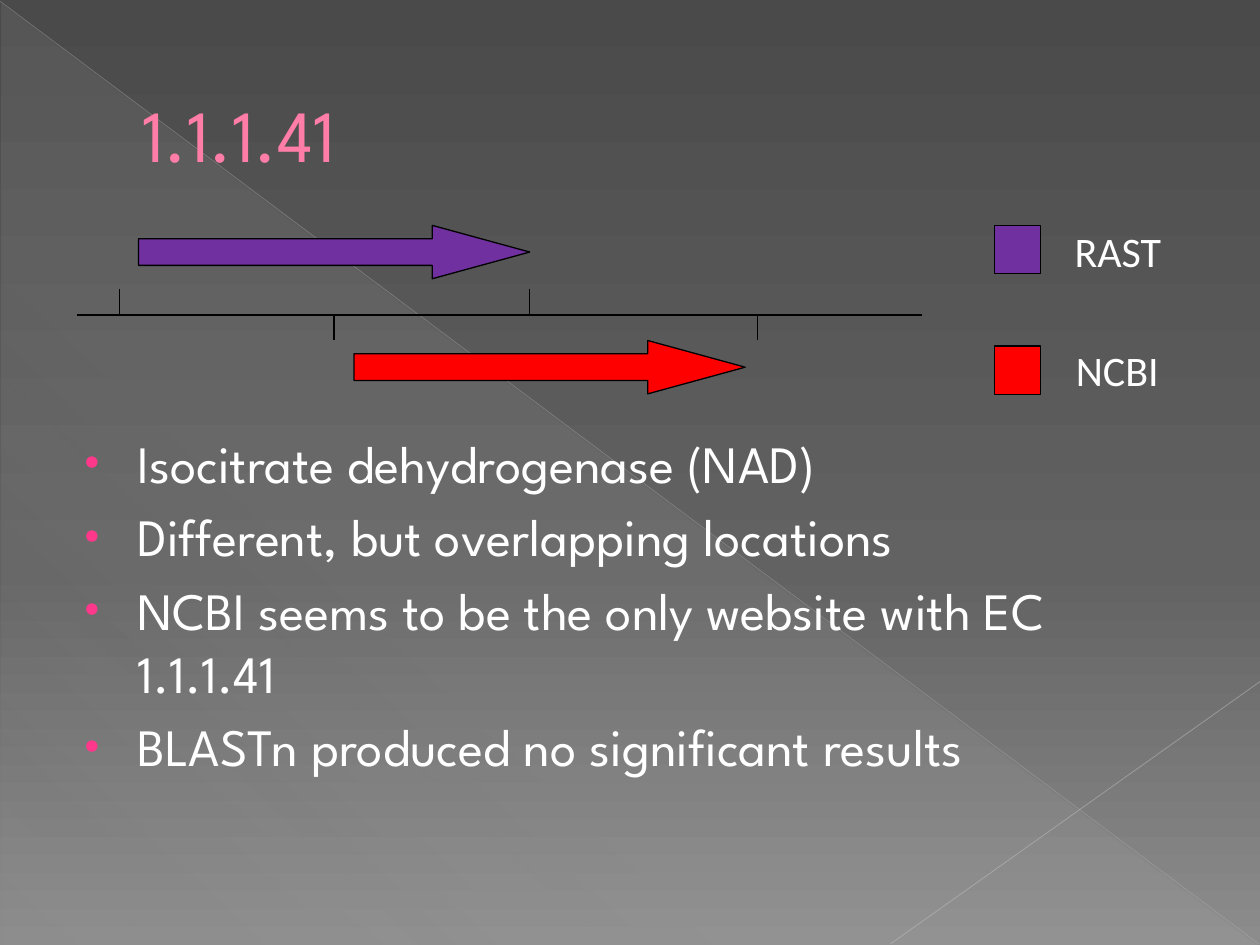
import pptx
import pptx.dml.color
import pptx.enum.shapes
import pptx.enum.text
import pptx.oxml.ns
import pptx.oxml.xmlchemy
import pptx.util
from lxml import etree

Pt = pptx.util.Pt
RGBColor = pptx.dml.color.RGBColor
qn = pptx.oxml.ns.qn
SHAPE = pptx.enum.shapes.MSO_SHAPE
ANCHOR = pptx.enum.text.MSO_ANCHOR
AUTO_SIZE = pptx.enum.text.MSO_AUTO_SIZE

BLACK = RGBColor(0x00, 0x00, 0x00)
WHITE = RGBColor(0xFF, 0xFF, 0xFF)
PURPLE = RGBColor(0x70, 0x30, 0xA0)
RED = RGBColor(0xFF, 0x00, 0x00)
TITLE_PINK = RGBColor(0xFF, 0x7D, 0xA7)
TITLE_EDGE = RGBColor(0xB1, 0x27, 0x61)
BULLET_PINK = RGBColor(0xFF, 0x38, 0x8C)
DARK_GRAY = RGBColor(0x4A, 0x4A, 0x4A)
MID_GRAY = RGBColor(0x62, 0x62, 0x62)
LIGHT_GRAY = RGBColor(0x8C, 0x8C, 0x8C)
SHEEN = RGBColor(0xD2, 0xD2, 0xD2)
DIAGONAL = RGBColor(0xBF, 0xBF, 0xBF)
CORNER = RGBColor(0xC6, 0xC6, 0xC6)

HEADING_FONT = "League Spartan"
LABEL_FONT = "Calibri"
BULLETS = [
    "Isocitrate dehydrogenase (NAD)",
    "Different, but overlapping locations",
    "NCBI seems to be the only website with EC 1.1.1.41",
    "BLASTn produced no significant results",
]


def add_node(parent, tag, **attributes):
    return etree.SubElement(parent, qn(tag), attributes)


def add_color(parent, color, opacity=100):
    node = add_node(parent, "a:srgbClr", val=str(color))
    if opacity < 100:
        add_node(node, "a:alpha", val=str(opacity * 1000))


def paint_gradient(fill, owner, stops, angle):
    fill.gradient()
    gradient = owner.find(".//" + qn("a:gradFill"))
    stop_list = gradient.find(qn("a:gsLst"))
    for stop in list(stop_list):
        stop_list.remove(stop)
    for position, color, opacity in stops:
        stop = add_node(stop_list, "a:gs", pos=str(position * 1000))
        add_color(stop, color, opacity)
    gradient.find(qn("a:lin")).set("ang", str(angle * 60000))


def add_line(page, start, end, color=BLACK, width=0.75, opacity=100):
    line = page.shapes.add_connector(
        pptx.enum.shapes.MSO_CONNECTOR.STRAIGHT,
        Pt(start[0]), Pt(start[1]), Pt(end[0]), Pt(end[1]))
    line.line.width = Pt(width)
    line.line.fill.solid()
    line.line.fill.fore_color.rgb = color
    if opacity < 100:
        solid = line.element.find(".//" + qn("a:srgbClr"))
        add_node(solid, "a:alpha", val=str(opacity * 1000))
    add_node(line.element.spPr, "a:effectLst")
    return line


def add_block(page, kind, left, top, width, height, color):
    block = page.shapes.add_shape(kind, Pt(left), Pt(top), Pt(width), Pt(height))
    block.shadow.inherit = False
    block.fill.solid()
    block.fill.fore_color.rgb = color
    block.line.color.rgb = BLACK
    block.line.width = Pt(0.75)
    return block


def add_span(para, text, font, size, color):
    span = para.add_run()
    span.text = text
    span.font.name = font
    span.font.size = Pt(size)
    span.font.color.rgb = color
    return span


def place(box, left, top, width, height):
    box.left, box.top, box.width, box.height = Pt(left), Pt(top), Pt(width), Pt(height)


def indent(para, margin, first_line):
    properties = para._p.get_or_add_pPr()
    properties.set("marL", str(Pt(margin)))
    properties.set("indent", str(Pt(first_line)))
    return properties


def add_backdrop(page):
    paint_gradient(page.background.fill, page.element,
                   [(0, DARK_GRAY, 100), (60, MID_GRAY, 100), (100, LIGHT_GRAY, 100)], 90)
    triangle = page.shapes.add_shape(SHAPE.RIGHT_TRIANGLE, Pt(0.7), Pt(1.4), Pt(718.6), Pt(538.6))
    triangle.shadow.inherit = False
    triangle.line.fill.background()
    paint_gradient(triangle.fill, triangle.element.spPr,
                   [(0, SHEEN, 10), (70, SHEEN, 8), (100, SHEEN, 1)], 133)
    diagonal = add_line(page, (0, 0.7), (719.3, 539.3), DIAGONAL, 0.39, 35)
    corner = add_line(page, (720, 389.5), (509, 539.3), CORNER, 0.47, 45)
    for position, shape in enumerate((triangle, diagonal, corner), start=2):
        page.shapes.element.insert(position, shape.element)


def fill_title(box, text):
    place(box, 36, 21, 648, 110)
    box.text_frame.auto_size = AUTO_SIZE.NONE
    box.text_frame.vertical_anchor = ANCHOR.MIDDLE
    para = box.text_frame.paragraphs[0]
    para.alignment = pptx.enum.text.PP_ALIGN.LEFT
    indent(para, 38, 0)
    span = add_span(para, text, HEADING_FONT, 42, TITLE_PINK)
    outline = etree.Element(qn("a:ln"), w=str(Pt(0.5)))
    add_color(add_node(outline, "a:solidFill"), TITLE_EDGE)
    span.font._element.insert(0, outline)


def fill_bullets(box, lines):
    place(box, 36, 242.6, 648, 265.7)
    frame = box.text_frame
    frame.auto_size = AUTO_SIZE.NONE
    for number, text in enumerate(lines):
        para = frame.add_paragraph() if number else frame.paragraphs[0]
        properties = indent(para, 35.3, -30.2)
        add_color(add_node(properties, "a:buClr"), BULLET_PINK)
        add_node(properties, "a:buSzPct", val="80000")
        add_node(properties, "a:buFont", typeface="Arial")
        add_node(properties, "a:buChar", char="•")
        add_span(para, text, HEADING_FONT, 30, WHITE)


def add_gene(page, left, top, color):
    arrow = add_block(page, SHAPE.RIGHT_ARROW, left, top, 223.5, 30.5, color)
    arrow.adjustments[0] = 0.5
    arrow.adjustments[1] = 1.827


def add_legend_entry(page, swatch_top, label_left, label_top, text, color):
    add_block(page, SHAPE.RECTANGLE, 568.5, swatch_top, 26, 27.5, color)
    box = page.shapes.add_textbox(Pt(label_left), Pt(label_top), Pt(75.6), Pt(36.7))
    box.text_frame.word_wrap = True
    box.text_frame.auto_size = AUTO_SIZE.SHAPE_TO_FIT_TEXT
    para = box.text_frame.paragraphs[0]
    para.space_after = Pt(10)
    add_span(para, text, LABEL_FONT, 24, WHITE)


def add_gene_map(page):
    axis = 180
    add_line(page, (44, axis), (527, axis))
    for x, rise in ((68.4, -15), (190.8, 14.5), (302.5, -15), (432.7, 14.5)):
        add_line(page, (x, axis + rise), (x, axis))
    add_gene(page, 79.2, 128.8, PURPLE)
    add_gene(page, 202.3, 194.6, RED)
    add_legend_entry(page, 128.8, 607, 125.3, "RAST", PURPLE)
    add_legend_entry(page, 197.8, 607.7, 193.2, "NCBI", RED)


def main():
    deck = pptx.Presentation()
    deck.slide_width, deck.slide_height = Pt(720), Pt(540)
    page = deck.slides.add_slide(deck.slide_layouts[1])
    add_backdrop(page)
    fill_title(page.shapes.title, "1.1.1.41")
    fill_bullets(page.placeholders[1], BULLETS)
    add_gene_map(page)
    deck.save("out.pptx")


if __name__ == "__main__":
    main()
